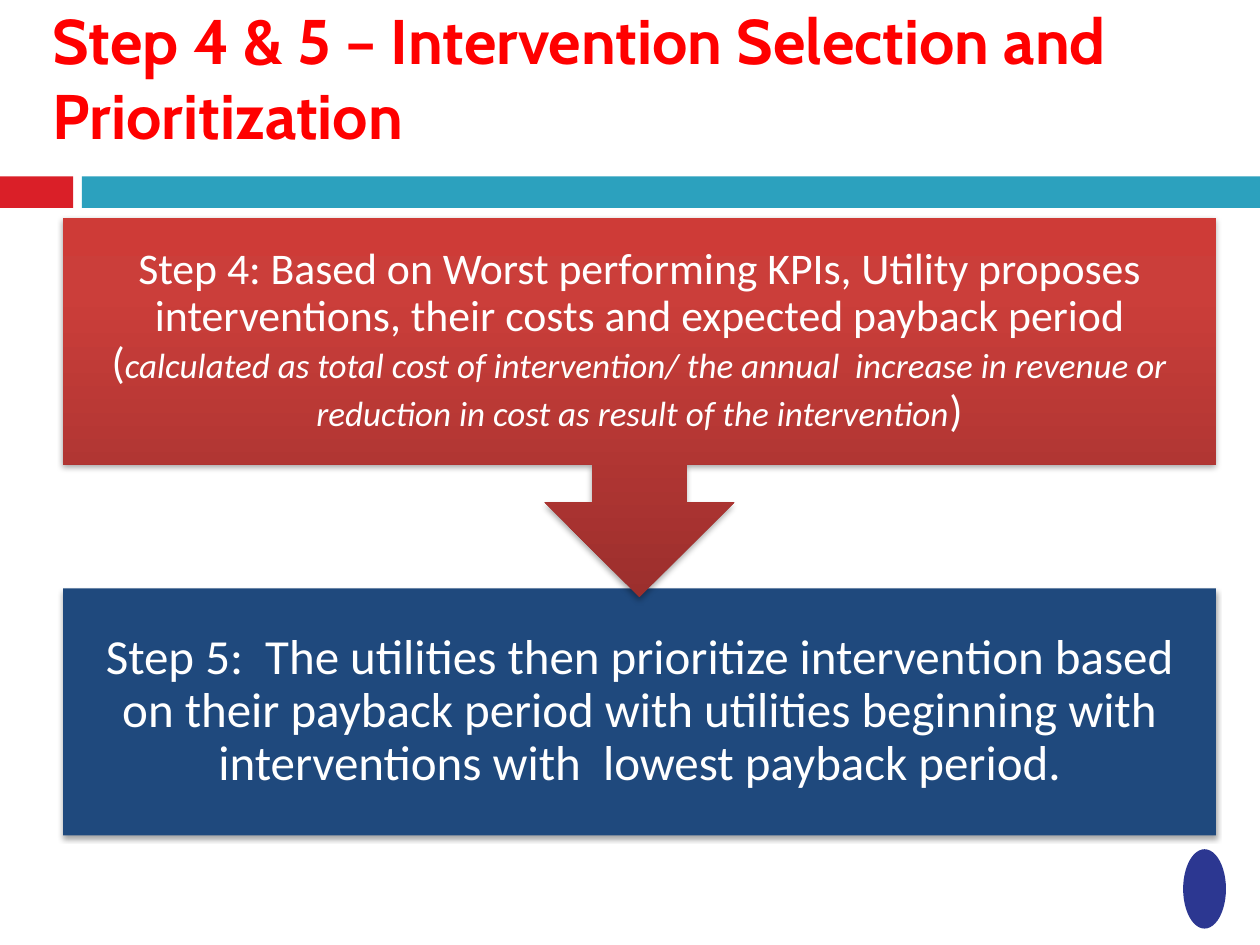
from lxml.etree import SubElement
from pptx import Presentation
from pptx.dml.color import RGBColor
from pptx.enum.shapes import MSO_SHAPE as Shape
from pptx.enum.text import MSO_ANCHOR as Anchor, PP_ALIGN as Align
from pptx.oxml.ns import qn
from pptx.util import Inches, Pt

COLUMNS, ROWS = 100, 75
WHITE, RED, TEAL, NAVY, INDIGO = "FFFFFF", "DA1F28", "2CA1BE", "1F497D", "2C3791"
CALLOUT_STOPS = [(0, "9C2F2D"), (80, "CB3E3A"), (100, "CE3B37")]


def color(hex_text):
    return RGBColor.from_string(hex_text)


class StepSlide:
    def __init__(self, presentation):
        self.cell_width = presentation.slide_width / COLUMNS
        self.cell_height = presentation.slide_height / ROWS
        self.slide = presentation.slides.add_slide(presentation.slide_layouts[6])

    def area(self, column, row, columns, rows):
        return (round(column * self.cell_width), round(row * self.cell_height),
                round(columns * self.cell_width), round(rows * self.cell_height))

    def block(self, area, fill, preset=Shape.RECTANGLE):
        shape = self.slide.shapes.add_shape(preset, *self.area(*area))
        shape.fill.solid()
        shape.fill.fore_color.rgb = color(fill)
        shape.line.fill.background()
        shape.shadow.inherit = False
        return shape

    def title(self, area, text):
        frame = self.slide.shapes.add_textbox(*self.area(*area)).text_frame
        self.set_frame(frame, 0, Anchor.TOP)
        paragraph = frame.paragraphs[0]
        paragraph.text = text
        self.set_font(paragraph.font, "Cabin", 36, "FF0000")
        paragraph.font.bold = True

    def step(self, area, fill, inset, size, runs, preset=Shape.RECTANGLE):
        """A shadowed box; runs are pairs of text and italic size (or None)."""
        shape = self.block(area, fill, preset)
        self.add_shadow(shape)
        self.set_frame(shape.text_frame, inset, Anchor.MIDDLE)
        paragraph = shape.text_frame.paragraphs[0]
        paragraph.alignment = Align.CENTER
        paragraph.line_spacing = 0.9
        self.set_font(paragraph.font, "Calibri", size, WHITE)
        for text, italic_size in runs:
            run = paragraph.add_run()
            run.text = text
            if italic_size:
                run.font.size = Pt(italic_size)
                run.font.italic = True
        return shape

    def set_frame(self, frame, inset, anchor):
        frame.word_wrap = True
        frame.vertical_anchor = anchor
        frame.margin_left = frame.margin_right = Inches(inset)
        frame.margin_top = frame.margin_bottom = Inches(inset)

    def set_font(self, font, name, size, font_color):
        font.name = name
        font.size = Pt(size)
        font.color.rgb = color(font_color)

    def add_shadow(self, shape):
        effects = shape.element.spPr.find(qn("a:effectLst"))
        shadow = SubElement(effects, qn("a:outerShdw"), blurRad=str(Pt(3.1)),
                            dist=str(Pt(1.8)), dir="5400000", rotWithShape="0")
        black = SubElement(shadow, qn("a:srgbClr"), val="000000")
        SubElement(black, qn("a:alpha"), val="35000")

    def shade_upward(self, shape, stops):
        shape.fill.gradient()
        shape.fill.gradient_angle = 90
        stop_list = shape.element.spPr.find(qn("a:gradFill")).find(qn("a:gsLst"))
        for old_stop in list(stop_list):
            stop_list.remove(old_stop)
        for percent, hex_text in stops:
            stop = SubElement(stop_list, qn("a:gs"), pos=str(percent * 1000))
            SubElement(stop, qn("a:srgbClr"), val=hex_text)


def main():
    presentation = Presentation()
    presentation.slide_width, presentation.slide_height = Inches(10), Inches(7.5)
    page = StepSlide(presentation)

    # Band under the title, and a plain mark in the corner
    page.block((0, 14, 5.8, 2.5), RED)
    page.block((6.5, 14, 93.5, 2.5), TEAL)
    page.block((93.9, 67.4, 3.4, 6.3), INDIGO, Shape.OVAL)

    page.title((4.2, 0.1, 91.5, 12.3),
               "Step 4 & 5 – Intervention Selection and Prioritization")

    # Steps, the lower one first so that the arrow overlaps it
    page.step((5, 46.7, 91.5, 19.6), NAVY, 0.22, 28, [
        ("Step 5:  The utilities then prioritize intervention based on their "
         "payback period with utilities beginning with interventions with  "
         "lowest payback period.", None)])
    callout = page.step((5, 17.3, 91.5, 30.1), RED, 0.19, 25, [
        ("Step 4: Based on Worst performing KPIs, Utility proposes "
         "interventions, their costs and expected payback period (", None),
        ("calculated as total cost of intervention/ the annual  increase in "
         "revenue or reduction in cost as result of the intervention", 20),
        (")", None)], Shape.DOWN_ARROW_CALLOUT)
    page.shade_upward(callout, CALLOUT_STOPS)

    presentation.save("out.pptx")


if __name__ == "__main__":
    main()
